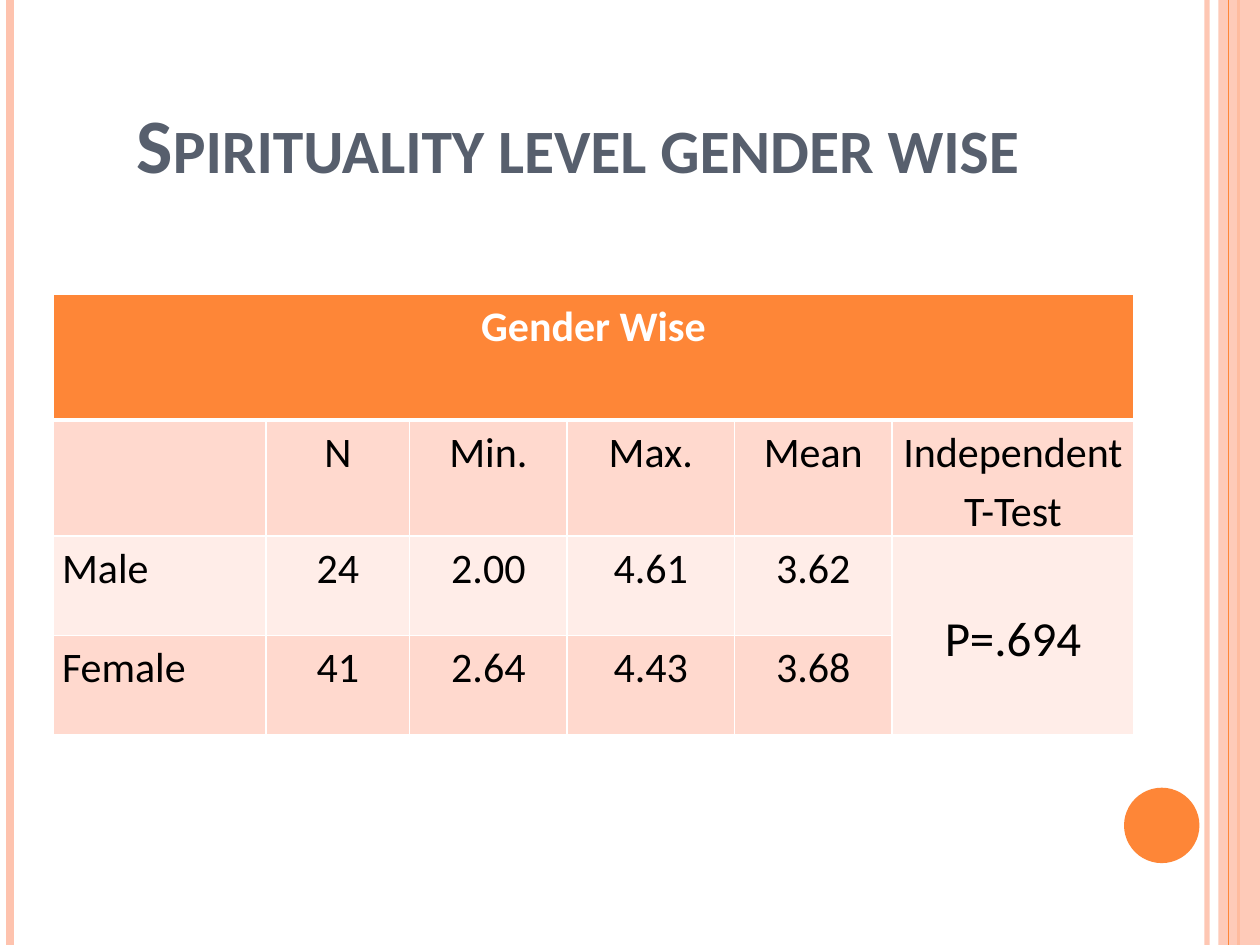
from dataclasses import dataclass

from lxml import etree
from pptx import Presentation
from pptx import util as u
from pptx.dml.color import RGBColor
from pptx.enum import shapes, text
from pptx.oxml import ns

FONT = "Calibri"
ORANGE, PEACH, WHITE, BLACK = "FE8637", "FEC3AE", "FFFFFF", "000000"
SLATE, DARK_BAND, LIGHT_BAND = "575F6D", "FFD9CE", "FFEDE8"
WIDTH, HEIGHT = 25.4, 19.05


@dataclass
class Stripe:
    x: float
    width: float
    color: str
    opacity: int = 100


BACK_STRIPES = [
    Stripe(24.33, 3, PEACH, 93),
    Stripe(0.2, 4.5, PEACH),
    Stripe(24.97, 1.5, ORANGE),
]
FRONT_STRIPE = Stripe(24.77, 0.75, ORANGE)

COLUMN_WIDTHS = [4.29, 2.9, 3.17, 3.38, 3.17, 4.88]
ROW_HEIGHTS = [2.54, 2.03, 2.0, 2.0]
ROW_FILLS = [ORANGE, DARK_BAND, LIGHT_BAND, DARK_BAND]
ROWS = [
    ["Gender Wise", "", "", "", "", ""],
    ["", "N", "Min.", "Max.", "Mean", "Independent T-Test"],
    ["Male", "24", "2.00", "4.61", "3.62", "P=.694"],
    ["Female", "41", "2.64", "4.43", "3.68", ""],
]


def rgb(color: str) -> RGBColor:
    return RGBColor.from_string(color)


def set_opacity(shape, percent: int) -> None:
    for color in shape._element.spPr.iter(ns.qn("a:srgbClr")):
        alpha = etree.SubElement(color, ns.qn("a:alpha"))
        alpha.set("val", str(percent * 1000))


def format_text(paragraph, size: float, color: str, bold: bool = False) -> None:
    for run in paragraph.runs:
        run.font.name = FONT
        run.font.size = u.Pt(size)
        run.font.bold = bold
        run.font.color.rgb = rgb(color)


def draw_stripe(slide, stripe: Stripe) -> None:
    x = u.Cm(stripe.x)
    line = slide.shapes.add_connector(
        shapes.MSO_CONNECTOR.STRAIGHT, x, 0, x, u.Cm(HEIGHT))
    line.line.color.rgb = rgb(stripe.color)
    line.line.width = u.Pt(stripe.width)
    if stripe.opacity < 100:
        set_opacity(line, stripe.opacity)
    etree.SubElement(line._element.spPr, ns.qn("a:effectLst"))


def draw_shape(slide, kind, left: float, top: float, width: float,
               height: float, color: str):
    shape = slide.shapes.add_shape(
        kind, u.Cm(left), u.Cm(top), u.Cm(width), u.Cm(height))
    shape.shadow.inherit = False
    shape.fill.solid()
    shape.fill.fore_color.rgb = rgb(color)
    shape.line.fill.background()
    return shape


def draw_title(slide, title: str) -> None:
    box = slide.shapes.add_textbox(u.Cm(1.27), u.Cm(0.76), u.Cm(20.75), u.Cm(3.18))
    frame = box.text_frame
    frame.word_wrap = True
    frame.vertical_anchor = text.MSO_ANCHOR.BOTTOM
    frame.text = title
    paragraph = frame.paragraphs[0]
    paragraph.alignment = text.PP_ALIGN.CENTER
    format_text(paragraph, 44, SLATE, bold=True)
    paragraph.runs[0]._r.get_or_add_rPr().set("cap", "small")


def add_borders(cell, bottom_width: float) -> None:
    properties = cell._tc.get_or_add_tcPr()
    for side, width in zip("LRTB", (1, 1, 1, bottom_width)):
        line = etree.SubElement(properties, ns.qn(f"a:ln{side}"), w=str(u.Pt(width)))
        fill = etree.SubElement(line, ns.qn("a:solidFill"))
        etree.SubElement(fill, ns.qn("a:srgbClr"), val=WHITE)


def fill_cell(cell, content: str, row: int, column: int) -> None:
    add_borders(cell, 3 if row == 0 else 1)
    cell.fill.solid()
    cell.fill.fore_color.rgb = rgb(ROW_FILLS[row])
    cell.margin_left = cell.margin_right = u.Cm(0.18)
    cell.margin_top = cell.margin_bottom = 0
    if not content:
        return
    cell.text_frame.text = content
    paragraph = cell.text_frame.paragraphs[0]
    paragraph.line_spacing = 1.15
    is_label = row > 1 and column == 0
    paragraph.alignment = text.PP_ALIGN.LEFT if is_label else text.PP_ALIGN.CENTER
    format_text(paragraph, 24, WHITE if row == 0 else BLACK, bold=row == 0)


def draw_table(slide) -> None:
    table = slide.shapes.add_table(
        len(ROWS), len(COLUMN_WIDTHS), u.Cm(1.07), u.Cm(5.93),
        u.Cm(sum(COLUMN_WIDTHS)), u.Cm(sum(ROW_HEIGHTS))).table
    table.horz_banding = False
    for column, width in zip(table.columns, COLUMN_WIDTHS):
        column.width = u.Cm(width)
    for row, height in zip(table.rows, ROW_HEIGHTS):
        row.height = u.Cm(height)
    for i, contents in enumerate(ROWS):
        for j, content in enumerate(contents):
            fill_cell(table.cell(i, j), content, i, j)

    # Heading across all columns, test result across both genders
    table.cell(0, 0).merge(table.cell(0, 5))
    result = table.cell(2, 5)
    result.merge(table.cell(3, 5))
    result.vertical_anchor = text.MSO_ANCHOR.MIDDLE
    format_text(result.text_frame.paragraphs[0], 28, BLACK)


def main() -> None:
    presentation = Presentation()
    presentation.slide_width, presentation.slide_height = u.Cm(WIDTH), u.Cm(HEIGHT)
    slide = presentation.slides.add_slide(presentation.slide_layouts[6])

    # Side decoration
    for stripe in BACK_STRIPES:
        draw_stripe(slide, stripe)
    band = draw_shape(slide, shapes.MSO_SHAPE.RECTANGLE, 24.56, 0, 0.84, HEIGHT, PEACH)
    set_opacity(band, 87)
    draw_stripe(slide, FRONT_STRIPE)
    draw_shape(slide, shapes.MSO_SHAPE.OVAL, 22.66, 15.88, 1.52, 1.52, ORANGE)

    # Content
    draw_title(slide, "Spirituality level gender wise")
    draw_table(slide)
    presentation.save("out.pptx")


if __name__ == "__main__":
    main()
